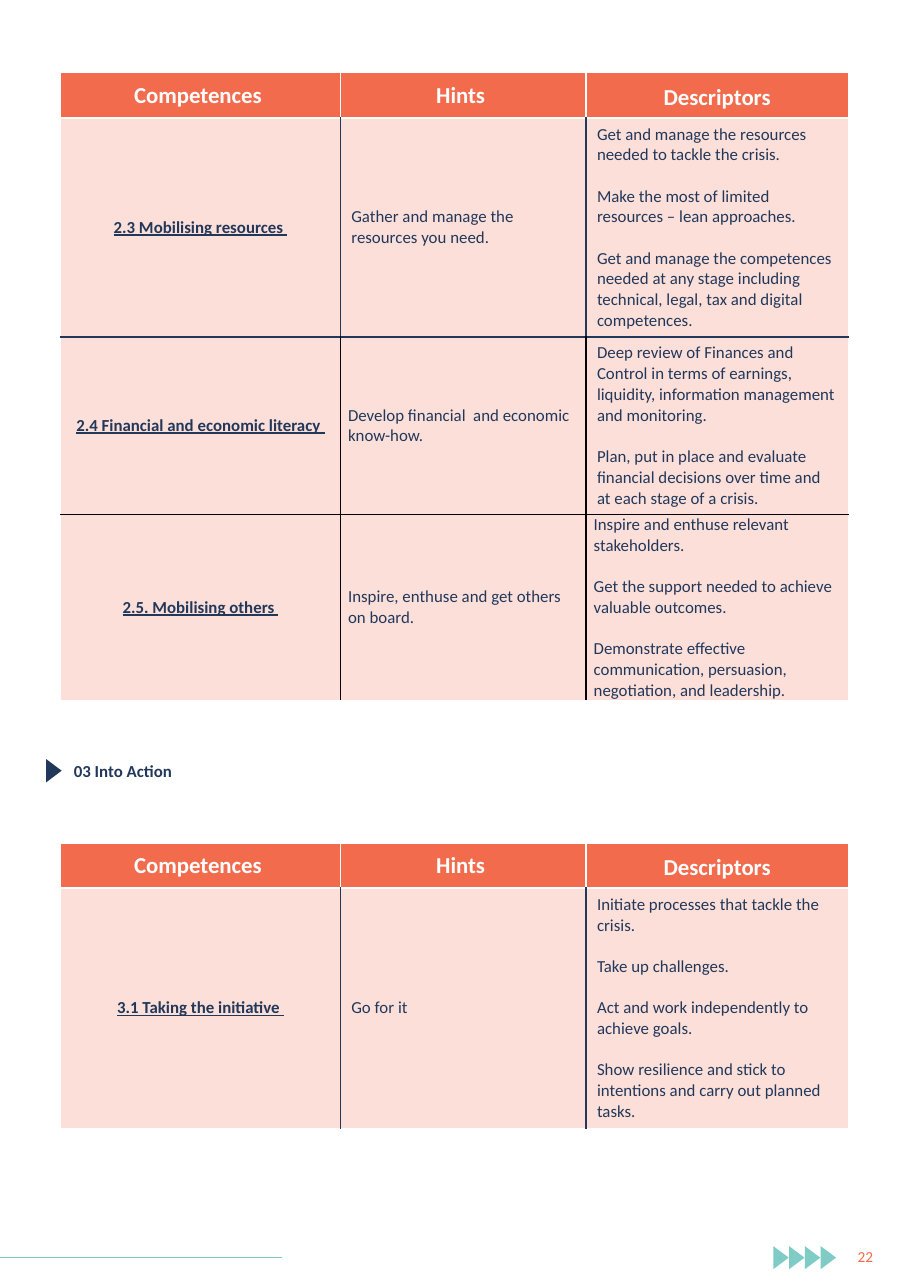
from lxml.etree import SubElement
from pptx import Presentation
from pptx.dml.color import RGBColor
from pptx.enum.shapes import MSO_CONNECTOR
from pptx.enum.text import MSO_ANCHOR, MSO_AUTO_SIZE, PP_ALIGN
from pptx.oxml.ns import qn
from pptx.util import Inches, Pt

ORANGE = RGBColor(0xF2, 0x6B, 0x4D)
NAVY = RGBColor(0x22, 0x38, 0x5A)
TEAL = RGBColor(0x7F, 0xCC, 0xC7)
WHITE = RGBColor(0xFF, 0xFF, 0xFF)
BLACK = RGBColor(0x00, 0x00, 0x00)
FONT = "Calibri"
TINT_ALPHA = 21
COLUMN_WIDTHS = (2.54, 2.23, 2.38)
HEADINGS = ("Competences ", "Hints ", "Descriptors")
HEADER_HEIGHT = 0.41
HEADING = {"size": Pt(14.9), "bold": True}
COMPETENCE = {"size": Pt(11), "bold": True, "underline": True}
PLAIN = {"size": Pt(11), "bold": False}
TIGHT = {"margin_left": Inches(0.07), "margin_right": Inches(0.07),
         "margin_top": 0, "margin_bottom": 0}

# Each row: height, competence, hint, descriptors, columns with tight margins
RESOURCES_ROWS = [
    (1.99, "2.3 Mobilising resources ", "Gather and manage the resources you need.",
     ["Get and manage the resources needed to tackle the crisis.",
      "Make the most of limited resources – lean approaches.",
      "Get and manage the competences needed at any stage including technical, "
      "legal, tax and digital competences."], ()),
    (1.61, "2.4 Financial and economic literacy ",
     "Develop financial  and economic know-how.",
     ["Deep review of Finances and Control in terms of earnings, liquidity, "
      "information management and monitoring.",
      "Plan, put in place and evaluate financial decisions over time and at each "
      "stage of a crisis."], (1,)),
    (1.69, "2.5. Mobilising others ", "Inspire, enthuse and get others on board.",
     ["Inspire and enthuse relevant stakeholders.",
      "Get the support needed to achieve valuable outcomes.",
      "Demonstrate effective communication, persuasion, negotiation, and leadership."],
     (1, 2)),
]
ACTION_ROWS = [
    (2.18, "3.1 Taking the initiative ", "Go for it",
     ["Initiate processes that tackle the crisis.",
      "Take up challenges.",
      "Act and work independently to achieve goals.",
      "Show resilience and stick to intentions and carry out planned tasks."], ()),
]


def apply(target, settings):
    for name, value in settings.items():
        setattr(target, name, value)


def write(frame, texts, color, font, align=PP_ALIGN.LEFT):
    """Fill a text frame with paragraphs set one text line apart."""
    for i, text in enumerate(texts):
        paragraph = frame.paragraphs[0] if i == 0 else frame.add_paragraph()
        paragraph.alignment = align
        if i:
            paragraph.space_before = Pt(13.4)
        run = paragraph.add_run()
        run.text = text
        apply(run.font, {"name": FONT, **font})
        run.font.color.rgb = color


def paint_cell(cell, fill, edges, alpha=100):
    """Draw the left, right, top and bottom edges, then the fill."""
    properties = cell._tc.get_or_add_tcPr()
    for side, color in zip("LRTB", edges):
        edge = SubElement(properties, qn("a:ln" + side), w=str(Pt(1)))
        SubElement(SubElement(edge, qn("a:solidFill")), qn("a:srgbClr"), val=str(color))
    cell.fill.solid()
    cell.fill.fore_color.rgb = fill
    if alpha < 100:
        tint = properties.find(qn("a:solidFill")).find(qn("a:srgbClr"))
        SubElement(tint, qn("a:alpha"), val=str(alpha * 1000))


def add_competence_table(slide, left, top, rows):
    heights = [HEADER_HEIGHT] + [row[0] for row in rows]
    table = slide.shapes.add_table(
        len(heights), len(COLUMN_WIDTHS), Inches(left), Inches(top),
        Inches(sum(COLUMN_WIDTHS)), Inches(sum(heights))).table
    apply(table, {"first_row": False, "horz_banding": False})
    for column, width in zip(table.columns, COLUMN_WIDTHS):
        column.width = Inches(width)
    for table_row, height in zip(table.rows, heights):
        table_row.height = Inches(height)

    for c, heading in enumerate(HEADINGS):
        cell = table.cell(0, c)
        cell.vertical_anchor = MSO_ANCHOR.MIDDLE
        write(cell.text_frame, [heading], WHITE, HEADING, PP_ALIGN.CENTER)
        paint_cell(cell, ORANGE, [WHITE] * 4)
    cell.margin_top = Inches(0.09)

    above = WHITE
    last_column = len(COLUMN_WIDTHS) - 1
    for r, (_, competence, hint, descriptors, tight) in enumerate(rows, start=1):
        rule = NAVY if r == 1 else BLACK
        below = WHITE if r == len(rows) else rule
        for c, texts in enumerate(([competence], [hint], descriptors)):
            cell = table.cell(r, c)
            cell.vertical_anchor = MSO_ANCHOR.MIDDLE
            if c in tight:
                apply(cell, TIGHT)
            if c == 0:
                write(cell.text_frame, texts, NAVY, COMPETENCE, PP_ALIGN.CENTER)
            else:
                write(cell.text_frame, texts, NAVY, PLAIN)
            edges = (WHITE if c == 0 else rule,
                     WHITE if c == last_column else rule, above, below)
            paint_cell(cell, ORANGE, edges, TINT_ALPHA)
        above = below


def add_pointer(slide, left, top, color, width=0.14, height=0.21):
    """Add a triangle that points right."""
    builder = slide.shapes.build_freeform(Inches(left + width), Inches(top + height / 2))
    builder.add_line_segments([(Inches(left), Inches(top)),
                               (Inches(left), Inches(top + height))])
    pointer = builder.convert_to_shape()
    pointer.shadow.inherit = False
    pointer.fill.solid()
    pointer.fill.fore_color.rgb = color
    pointer.line.fill.background()


def add_section_title(slide, left, top, width, height):
    add_pointer(slide, left, top + 0.02, NAVY)
    title = slide.shapes.title
    apply(title, {"left": Inches(left + 0.15), "top": Inches(top),
                  "width": Inches(width - 0.15), "height": Inches(height)})
    apply(title.text_frame, {"vertical_anchor": MSO_ANCHOR.TOP, "word_wrap": True,
                             "auto_size": MSO_AUTO_SIZE.NONE})
    write(title.text_frame, ["03 Into Action"], NAVY, {"size": Pt(11), "bold": True})
    title.text_frame.paragraphs[0].line_spacing = 0.9


def add_footer(slide, top):
    rule_y = Inches(top + 0.15)
    rule = slide.shapes.add_connector(MSO_CONNECTOR.STRAIGHT, 0, rule_y, Inches(2.56), rule_y)
    rule.line.color.rgb = TEAL
    rule.line.width = Pt(0.75)
    SubElement(rule._element.spPr, qn("a:effectLst"))
    for i in range(4):
        add_pointer(slide, 7.02 + i * 0.43 / 3, top + 0.05, TEAL)
    page_number = slide.shapes.add_textbox(Inches(7.66), Inches(top), Inches(0.39), Inches(0.29))
    apply(page_number.text_frame, {"word_wrap": True, "vertical_anchor": MSO_ANCHOR.MIDDLE})
    write(page_number.text_frame, ["22"], ORANGE, {"size": Pt(10)}, PP_ALIGN.CENTER)


def main():
    deck = Presentation()
    apply(deck, {"slide_width": Inches(8.27), "slide_height": Inches(11.69)})
    slide = deck.slides.add_slide(deck.slide_layouts.get_by_name("Title Only"))
    add_footer(slide, 11.26)
    add_competence_table(slide, 0.55, 0.66, RESOURCES_ROWS)
    add_section_title(slide, 0.42, 6.87, 7.3, 0.55)
    add_competence_table(slide, 0.55, 7.65, ACTION_ROWS)
    deck.save("out.pptx")


if __name__ == "__main__":
    main()
